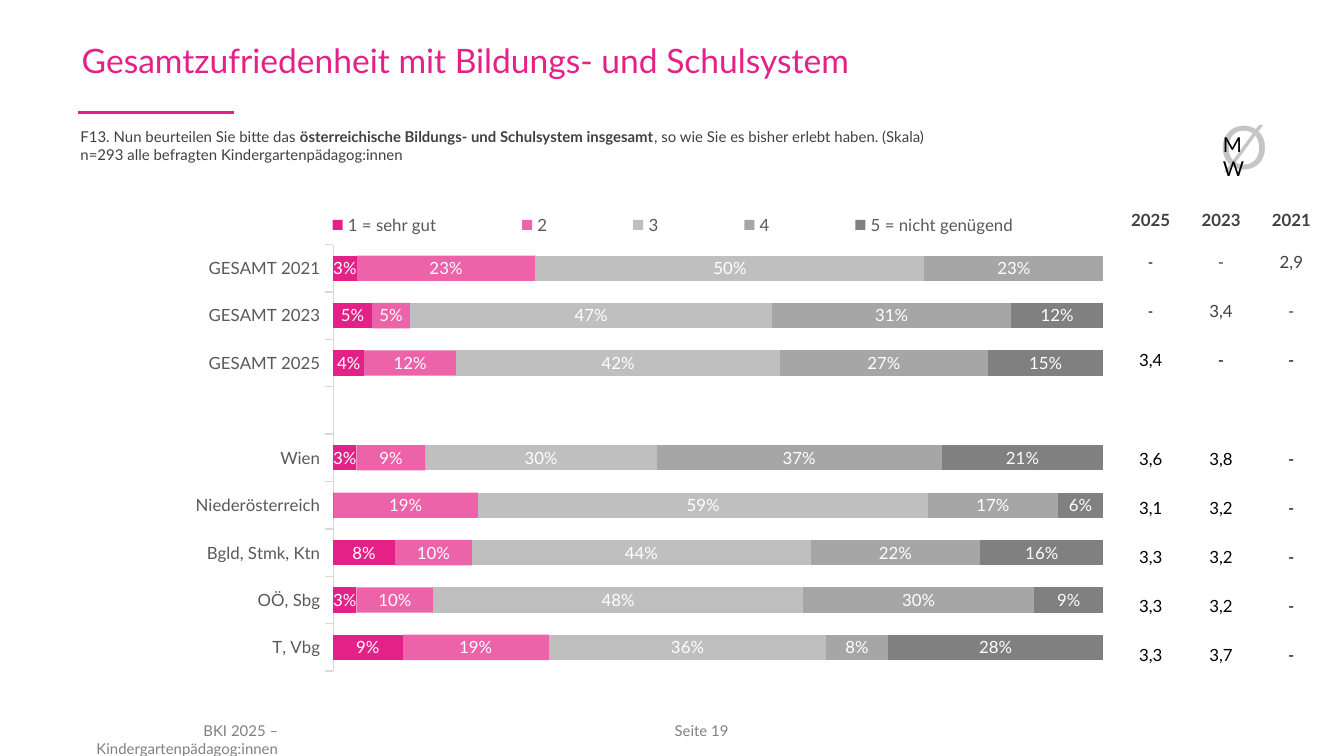
from dataclasses import dataclass
from typing import Any, Optional

import lxml.etree
import pptx
import pptx.chart.data
import pptx.dml.color
import pptx.enum.chart
import pptx.enum.shapes
import pptx.enum.text
import pptx.oxml
import pptx.oxml.ns
import pptx.util

Inches = pptx.util.Inches
Pt = pptx.util.Pt
qn = pptx.oxml.ns.qn
Align = pptx.enum.text.PP_ALIGN
Anchor = pptx.enum.text.MSO_ANCHOR

PINK, DARK, BLACK, WHITE = "E42187", "404040", "000000", "FFFFFF"
LABEL_GREY, FOOTER_GREY, AXIS_GREY = "595959", "808080", "D9D9D9"


@dataclass
class Rating:
    name: str
    shares: tuple[Optional[float], ...]
    fill: str
    opacity: int = 100
    hidden_label: Optional[int] = None


REGIONS = ("GESAMT 2021", "GESAMT 2023", "GESAMT 2025", "", "Wien",
           "Niederösterreich", "Bgld, Stmk, Ktn", "OÖ, Sbg", "T, Vbg")
RATINGS = (
    Rating("1 = sehr gut", (0.03, 0.05, 0.04, None, 0.03, 0, 0.08, 0.03, 0.09), PINK, hidden_label=5),
    Rating("2", (0.23, 0.05, 0.12, None, 0.09, 0.19, 0.1, 0.1, 0.19), PINK, opacity=70),
    Rating("3", (0.5, 0.47, 0.42, None, 0.3, 0.59, 0.44, 0.48, 0.36), "BFBFBF"),
    Rating("4", (0.23, 0.31, 0.27, None, 0.37, 0.17, 0.22, 0.3, 0.08), "A6A6A6"),
    Rating("5 = nicht genügend", (0, 0.12, 0.15, None, 0.21, 0.06, 0.16, 0.09, 0.28),
           "808080", hidden_label=0),
)
MEANS = (
    ("2025", "2023", "2021"),
    ("-", "-", "2,9"),
    ("-", "3,4", "-"),
    ("3,4", "-", "-"),
    ("", "", ""),
    ("3,6", "3,8", "-"),
    ("3,1", "3,2", "-"),
    ("3,3", "3,2", "-"),
    ("3,3", "3,2", "-"),
    ("3,3", "3,7", "-"),
)


def colour(hex_code: str) -> pptx.dml.color.RGBColor:
    return pptx.dml.color.RGBColor.from_string(hex_code)


def set_font(font: Any, size: float, hex_code: str, bold: bool = False, name: str = "Lato") -> None:
    font.size, font.bold, font.name = Pt(size), bold, name
    font.color.rgb = colour(hex_code)


def set_opacity(element: Any, percent: int) -> None:
    """Apply an opacity to every RGB colour already inside the element."""
    for rgb in element.iter(qn("a:srgbClr")):
        lxml.etree.SubElement(rgb, qn("a:alpha"), val=str(percent * 1000))


def add_run(paragraph: Any, text: str, *, size: float, hex_code: str, bold: bool = False,
            font: str = "Lato", opacity: int = 100) -> None:
    run = paragraph.add_run()
    run.text = text
    set_font(run.font, size, hex_code, bold, font)
    if opacity < 100:
        set_opacity(run._r, opacity)


def add_text(slide: Any, box: tuple[float, ...], text: str, *, align: Any = Align.LEFT,
             anchor: Any = Anchor.TOP, **run_format: Any) -> Any:
    """Add a wrapping text box and return its text frame."""
    frame = slide.shapes.add_textbox(*map(Inches, box)).text_frame
    frame.word_wrap = True
    frame.vertical_anchor = anchor
    frame.paragraphs[0].alignment = align
    add_run(frame.paragraphs[0], text, **run_format)
    return frame


def add_question(slide: Any) -> None:
    style = {"size": 8, "hex_code": DARK}
    frame = add_text(slide, (0.5, 0.9, 9.15, 0.37), "F13. Nun beurteilen Sie bitte das ", **style)
    question = frame.paragraphs[0]
    add_run(question, "österreichische Bildungs- und Schulsystem insgesamt", bold=True, **style)
    add_run(question, ", so wie Sie es bisher erlebt haben. (Skala)", **style)
    add_run(frame.add_paragraph(), "n=293 alle befragten Kindergartenpädagog:innen", **style)


def add_title_rule(slide: Any) -> None:
    rule = slide.shapes.add_connector(pptx.enum.shapes.MSO_CONNECTOR.STRAIGHT,
                                      Inches(0.58), Inches(0.84), Inches(1.74), Inches(0.84))
    rule.line.color.rgb = colour(PINK)
    rule.line.width = Pt(1.5)
    lxml.etree.SubElement(rule._element.spPr, qn("a:effectLst"))


def manual_layout(x: float, y: float, width: float, height: float, inner: bool = False) -> Any:
    target = '<c:layoutTarget val="inner"/>' if inner else ""
    return pptx.oxml.parse_xml(
        f'<c:layout {pptx.oxml.ns.nsdecls("c")}><c:manualLayout>{target}'
        '<c:xMode val="edge"/><c:yMode val="edge"/>'
        f'<c:x val="{x}"/><c:y val="{y}"/><c:w val="{width}"/><c:h val="{height}"/>'
        '</c:manualLayout></c:layout>')


def style_series(series: Any, rating: Rating) -> None:
    series.format.fill.solid()
    series.format.fill.fore_color.rgb = colour(rating.fill)
    if rating.opacity < 100:
        set_opacity(series._element, rating.opacity)
    labels = series.data_labels
    labels.show_value = True
    labels.number_format, labels.number_format_is_linked = "0%", False
    set_font(labels.font, 9, WHITE)
    if rating.hidden_label is not None:
        labels._element.insert(0, pptx.oxml.parse_xml(
            f'<c:dLbl {pptx.oxml.ns.nsdecls("c")}><c:idx val="{rating.hidden_label}"/>'
            '<c:delete val="1"/></c:dLbl>'))


def add_ratings_chart(slide: Any) -> None:
    data = pptx.chart.data.CategoryChartData(number_format="0%")
    data.categories = REGIONS
    for rating in RATINGS:
        data.add_series(rating.name, rating.shares)
    chart = slide.shapes.add_chart(pptx.enum.chart.XL_CHART_TYPE.BAR_STACKED_100,
                                   *map(Inches, (0.67, 1.4, 7.54, 3.65)), data).chart
    set_font(chart.font, 9, LABEL_GREY)
    chart.has_title = False

    plot = chart.plots[0]
    plot.gap_width, plot.overlap, plot.vary_by_categories = 87, 100, False
    for series, rating in zip(plot.series, RATINGS):
        style_series(series, rating)

    regions = chart.category_axis
    regions.reverse_order = True
    regions.has_major_gridlines = False
    regions.major_tick_mark = pptx.enum.chart.XL_TICK_MARK.OUTSIDE
    regions.format.line.color.rgb = colour(AXIS_GREY)
    regions.format.line.width = Pt(0.75)
    set_font(regions.tick_labels.font, 9, LABEL_GREY)
    chart.value_axis.has_major_gridlines = False
    chart.value_axis.visible = False

    chart.has_legend = True
    legend = chart.legend
    legend.position = pptx.enum.chart.XL_LEGEND_POSITION.TOP
    legend.include_in_layout = False
    set_font(legend.font, 9, LABEL_GREY)
    legend._element.find(qn("c:legendPos")).addnext(manual_layout(0.16, 0.04, 0.83, 0.07))

    plot_area = chart._chartSpace.chart.plotArea
    for layout in plot_area.findall(qn("c:layout")):
        plot_area.remove(layout)
    plot_area.insert(0, manual_layout(0.24, 0.115, 0.76, 0.87, inner=True))


def add_means_table(slide: Any) -> None:
    table = slide.shapes.add_table(len(MEANS), len(MEANS[0]),
                                   *map(Inches, (8.3, 1.4, 1.57, 3.65))).table
    table.horz_banding = False
    for row, means in enumerate(MEANS):
        for column, mean in enumerate(means):
            cell = table.cell(row, column)
            cell.fill.background()
            cell.vertical_anchor = Anchor.MIDDLE if row else Anchor.BOTTOM
            old_year_dash = row in (1, 2) and column == 0
            if row > 2 or old_year_dash:
                cell.margin_left = cell.margin_right = cell.margin_top = Inches(0.01)
                cell.margin_bottom = 0
            paragraph = cell.text_frame.paragraphs[0]
            paragraph.alignment = Align.CENTER
            if mean:
                add_run(paragraph, mean, size=8 if old_year_dash else 9, bold=row == 0,
                        hex_code=BLACK if row > 2 or old_year_dash else DARK,
                        font="Arial" if old_year_dash else "Lato")


def main() -> None:
    presentation = pptx.Presentation()
    presentation.slide_width, presentation.slide_height = Inches(10), Inches(10 * 9 / 16)
    slide = presentation.slides.add_slide(presentation.slide_layouts[6])

    footer = {"size": 8, "hex_code": FOOTER_GREY, "align": Align.RIGHT}
    add_text(slide, (4.88, 5.32, 0.64, 0.24), "Seite 19", **footer)
    add_text(slide, (0.24, 5.32, 1.93, 0.24), "BKI 2025 – Kindergartenpädagog:innen", **footer)
    add_title_rule(slide)
    add_question(slide)
    add_text(slide, (8.98, 0.77, 0.78, 0.64), "Ø", size=32, hex_code=DARK, opacity=30)
    add_text(slide, (0.51, 0.1, 6.46, 0.7), "Gesamtzufriedenheit mit Bildungs- und Schulsystem",
             size=18, hex_code=PINK, anchor=Anchor.MIDDLE)
    add_ratings_chart(slide)
    add_text(slide, (9, 0.93, 0.48, 0.29), "MW", size=11, hex_code=BLACK)
    add_means_table(slide)
    presentation.save("out.pptx")


if __name__ == "__main__":
    main()
